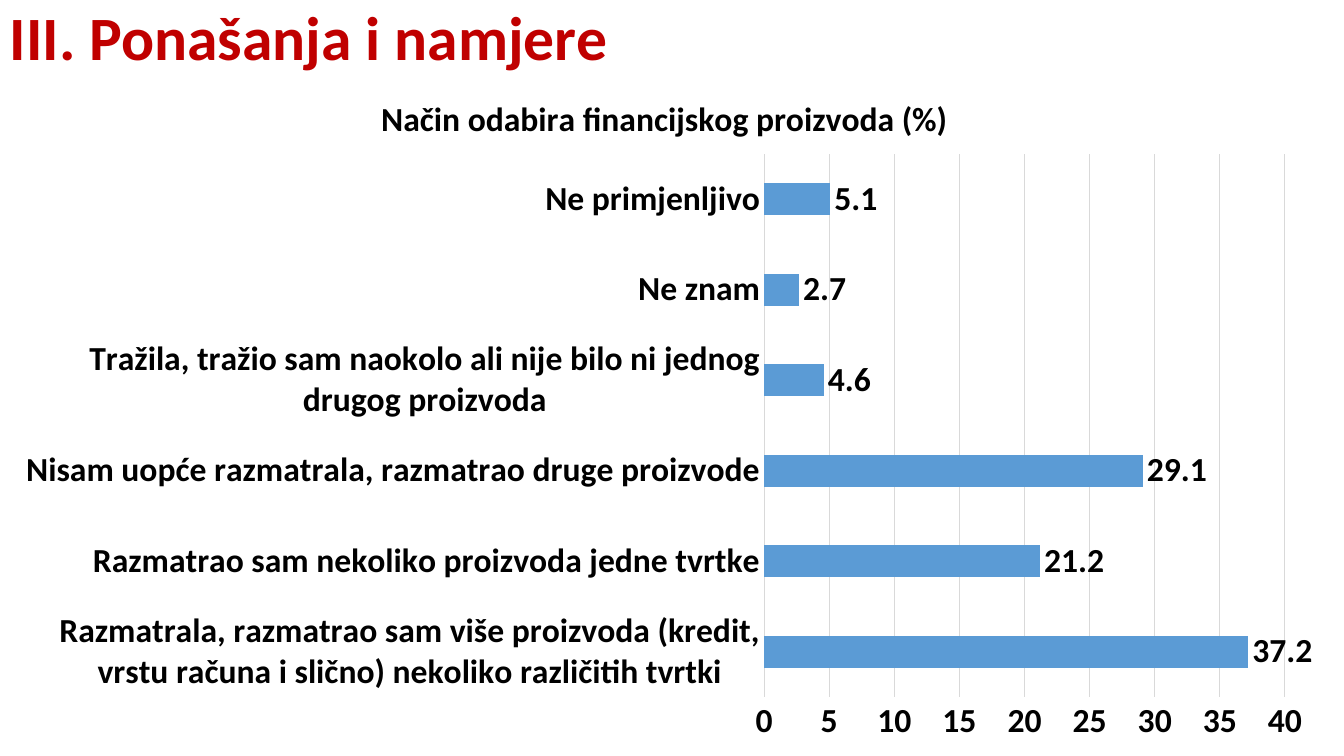
from lxml import etree
from pptx import Presentation
from pptx import util as u
from pptx.chart.data import CategoryChartData
from pptx.dml.color import RGBColor
from pptx.enum import chart as ch
from pptx.enum import text
from pptx.oxml import ns

RED = RGBColor(0xC0, 0x00, 0x00)
BLACK = RGBColor(0, 0, 0)
BLUE = RGBColor(0x5B, 0x9B, 0xD5)
GREY = RGBColor(0xD9, 0xD9, 0xD9)

ANSWERS = {
    "Razmatrala, razmatrao sam više proizvoda (kredit, vrstu računa i slično) "
    "nekoliko različitih tvrtki": 37.2,
    "Razmatrao sam nekoliko proizvoda jedne tvrtke": 21.2,
    "Nisam uopće razmatrala, razmatrao druge proizvode": 29.1,
    "Tražila, tražio sam naokolo ali nije bilo ni jednog drugog proizvoda": 4.6,
    "Ne znam": 2.7,
    "Ne primjenljivo": 5.1,
}


class SlideBuilder:
    family = "Calibri"

    def __init__(self, slide):
        self.slide = slide

    def style(self, font, size, color=BLACK):
        font.name = self.family
        font.size = u.Pt(size)
        font.bold = True
        font.color.rgb = color

    def heading(self, words, left, top, width, height):
        box = self.slide.shapes.add_textbox(
            u.Inches(left), u.Inches(top), u.Inches(width), u.Inches(height))
        frame = box.text_frame
        frame.word_wrap = True
        frame.vertical_anchor = text.MSO_ANCHOR.MIDDLE
        line = frame.paragraphs[0]
        line.text = words
        line.line_spacing = 0.9
        self.style(line.font, 44, RED)

    def grey_line(self, line):
        line.color.rgb = GREY
        line.width = u.Pt(0.75)

    def place_plot(self, chart, **fractions):
        """Fix the inner plot area as fractions of the chart frame."""
        plot_area = chart.plots[0]._element.getparent()
        layout = plot_area.find(ns.qn("c:layout"))
        if layout is None:
            layout = etree.Element(ns.qn("c:layout"))
            plot_area.insert(0, layout)
        manual = etree.SubElement(layout, ns.qn("c:manualLayout"))
        settings = {"layoutTarget": "inner", "xMode": "edge", "yMode": "edge"}
        for tag, value in (settings | fractions).items():
            etree.SubElement(manual, ns.qn(f"c:{tag}")).set("val", str(value))

    def bar_chart(self, title, answers, left, top, width, height):
        data = CategoryChartData()
        data.categories = list(answers)
        data.add_series("Series 1", list(answers.values()))
        chart = self.slide.shapes.add_chart(
            ch.XL_CHART_TYPE.BAR_CLUSTERED, u.Inches(left), u.Inches(top),
            u.Inches(width), u.Inches(height), data).chart
        self.style(chart.font, 12)
        chart.has_legend = False
        chart.has_title = True
        caption = chart.chart_title.text_frame.paragraphs[0]
        caption.text = title
        self.style(caption.font, 24)

        for axis in (chart.category_axis, chart.value_axis):
            axis.major_tick_mark = axis.minor_tick_mark = ch.XL_TICK_MARK.NONE
            self.style(axis.tick_labels.font, 24)
        self.grey_line(chart.category_axis.format.line)
        scale = chart.value_axis
        scale.minimum_scale, scale.maximum_scale, scale.major_unit = 0, 40, 5
        scale.format.line.fill.background()
        self.grey_line(scale.major_gridlines.format.line)

        plot = chart.plots[0]
        plot.gap_width = 182
        plot.vary_by_categories = False
        bars = plot.series[0]
        bars.format.fill.solid()
        bars.format.fill.fore_color.rgb = BLUE
        labels = bars.data_labels
        labels.show_value = True
        labels.position = ch.XL_LABEL_POSITION.OUTSIDE_END
        self.style(labels.font, 24)
        self.place_plot(chart, x=0.575, y=0.122, w=0.392, h=0.792)


def main():
    deck = Presentation()
    deck.slide_width, deck.slide_height = u.Inches(13.33), u.Inches(7.5)
    page = SlideBuilder(deck.slides.add_slide(deck.slide_layouts[6]))
    page.heading("III. Ponašanja i namjere", 0, 0, 6.47, 0.8)
    page.bar_chart("Način odabira financijskog proizvoda (%)", ANSWERS,
                   0, 0.7, 13.18, 6.8)
    deck.save("out.pptx")


if __name__ == "__main__":
    main()
